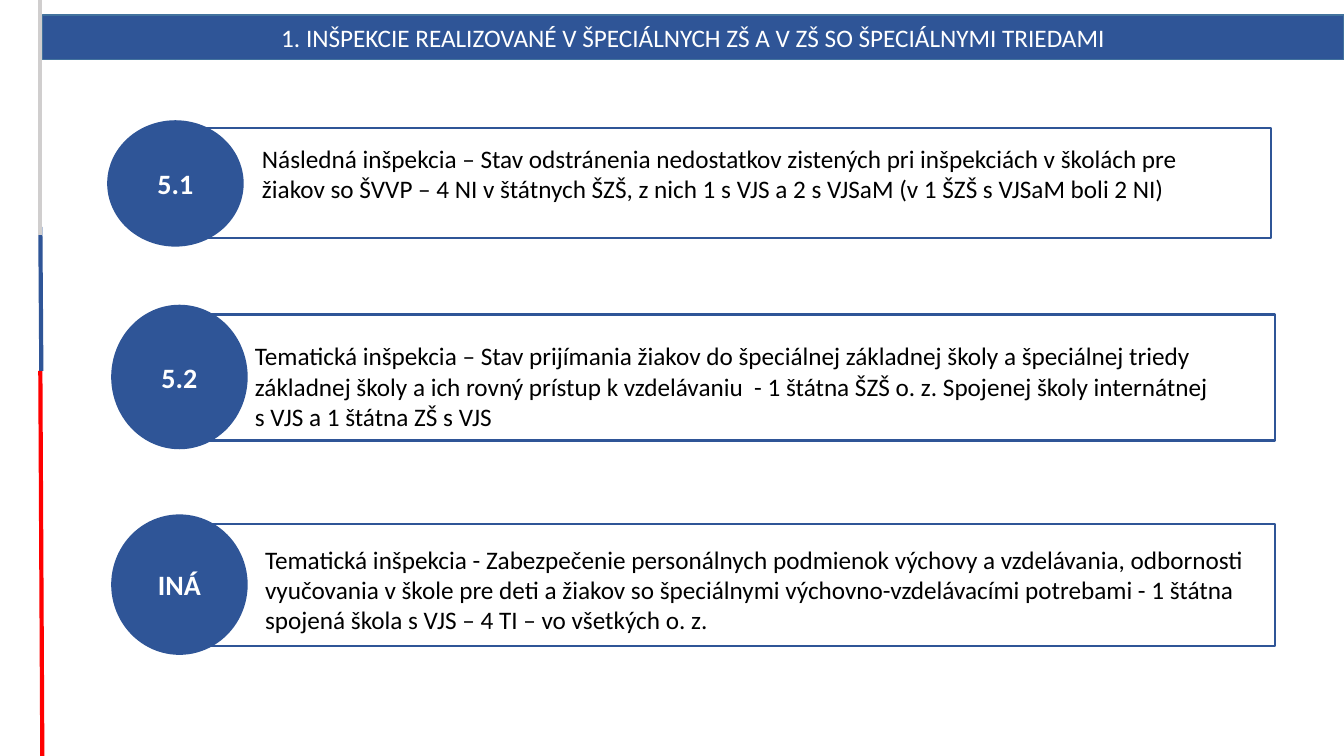
from lxml import etree
from pptx import Presentation
from pptx.dml.color import RGBColor
from pptx.enum.shapes import MSO_CONNECTOR, MSO_SHAPE
from pptx.enum.text import MSO_ANCHOR, PP_ALIGN
from pptx.oxml.ns import qn
from pptx.util import Inches, Pt

RECTANGLE, OVAL = MSO_SHAPE.RECTANGLE, MSO_SHAPE.OVAL
STRAIGHT = MSO_CONNECTOR.STRAIGHT
LEFT, CENTER = PP_ALIGN.LEFT, PP_ALIGN.CENTER
TOP, MIDDLE = MSO_ANCHOR.TOP, MSO_ANCHOR.MIDDLE

BLUE, WHITE, BLACK = "2F5597", "FFFFFF", "000000"
TITLE_FORMAT = {"name": "Calibri", "size": Pt(18), "bold": False}
BADGE_FORMAT = {"name": "Calibri", "size": Pt(20), "bold": True}
BODY_FORMAT = {"name": "Calibri", "size": Pt(18), "bold": False}

TITLE = "1. INŠPEKCIE REALIZOVANÉ V ŠPECIÁLNYCH ZŠ A V ZŠ SO ŠPECIÁLNYMI TRIEDAMI"
STRIPES = [
    ((0.42, 7.5), (0.4, 3.68), "FF0000"),
    ((0.41, 3.68), (0.4, 2.25), BLUE),
    ((0.4, 2.33), (0.4, 0), "D0CECE"),
]
INSPECTIONS = [
    {
        "label": "5.1",
        "badge": (1.07, 1.2, 1.34, 1.24),
        "frame": (2.03, 1.27, 10.58, 1.09),
        "body": (2.5, 1.37, 9.95, 0.71),
        "paragraphs": [
            "Následná inšpekcia – Stav odstránenia nedostatkov zistených pri "
            "inšpekciách v školách pre žiakov so ŠVVP – 4 NI v štátnych ŠZŠ, "
            "z nich 1 s VJS a 2 s VJSaM (v 1 ŠZŠ s VJSaM boli 2 NI)",
        ],
    },
    {
        "label": "5.2",
        "badge": (1.11, 3.03, 1.34, 1.42),
        "frame": (2.07, 3.12, 10.58, 1.25),
        "body": (2.43, 3.33, 10.18, 1.01),
        "paragraphs": [
            "Tematická inšpekcia – Stav prijímania žiakov do špeciálnej základnej "
            "školy a špeciálnej triedy základnej školy a ich rovný prístup "
            "k vzdelávaniu  - 1 štátna ŠZŠ o. z. Spojenej školy internátnej",
            "s VJS a 1 štátna ZŠ s VJS",
        ],
    },
    {
        "label": "INÁ",
        "badge": (1.11, 5.11, 1.34, 1.38),
        "frame": (2.07, 5.2, 10.58, 1.21),
        "body": (2.53, 5.35, 9.95, 1.01),
        "paragraphs": [
            "Tematická inšpekcia - Zabezpečenie personálnych podmienok výchovy "
            "a vzdelávania, odbornosti vyučovania v škole pre deti a žiakov so "
            "špeciálnymi výchovno-vzdelávacími potrebami - 1 štátna spojená škola "
            "s VJS – 4 TI – vo všetkých o. z.",
        ],
    },
]


def paint(color_format, color):
    """Apply a hex colour to a colour format."""
    color_format.rgb = RGBColor.from_string(color)


def write(holder, paragraphs, font_format, color, align, anchor):
    """Fill a shape or text box with formatted paragraphs."""
    frame = holder.text_frame
    frame.word_wrap = True
    frame.vertical_anchor = anchor
    frame.text = "\n".join(paragraphs)
    for paragraph in frame.paragraphs:
        paragraph.alignment = align
        font = paragraph.runs[0].font
        for attribute, value in font_format.items():
            setattr(font, attribute, value)
        paint(font.color, color)


def add_panel(slide, kind, box, fill, outline, width):
    """Add a filled and outlined preset shape."""
    panel = slide.shapes.add_shape(kind, *map(Inches, box))
    panel.shadow.inherit = False
    panel.fill.solid()
    paint(panel.fill.fore_color, fill)
    paint(panel.line.color, outline)
    panel.line.width = Pt(width)
    return panel


def add_stripe(slide, start, end, color):
    """Add one coloured segment of the line on the left edge."""
    stripe = slide.shapes.add_connector(STRAIGHT, *map(Inches, start + end))
    paint(stripe.line.color, color)
    stripe.line.width = Pt(3)
    etree.SubElement(stripe._element.spPr, qn("a:effectLst"))


def add_inspection(slide, inspection):
    """Add a framed description with its round label."""
    add_panel(slide, RECTANGLE, inspection["frame"], WHITE, BLUE, 1.5)
    badge = add_panel(slide, OVAL, inspection["badge"], BLUE, BLUE, 1)
    write(badge, [inspection["label"]], BADGE_FORMAT, WHITE, CENTER, MIDDLE)
    body = slide.shapes.add_textbox(*map(Inches, inspection["body"]))
    write(body, inspection["paragraphs"], BODY_FORMAT, BLACK, LEFT, TOP)


def main():
    """Build the slide and save it."""
    deck = Presentation()
    deck.slide_width, deck.slide_height = Inches(13.33), Inches(7.5)
    slide = deck.slides.add_slide(deck.slide_layouts[6])
    for start, end, color in STRIPES:
        add_stripe(slide, start, end, color)
    banner = add_panel(slide, RECTANGLE, (0.42, 0.15, 12.91, 0.44), BLUE, "43739E", 1)
    write(banner, [TITLE], TITLE_FORMAT, WHITE, CENTER, MIDDLE)
    for inspection in INSPECTIONS:
        add_inspection(slide, inspection)
    deck.save("out.pptx")


if __name__ == "__main__":
    main()
